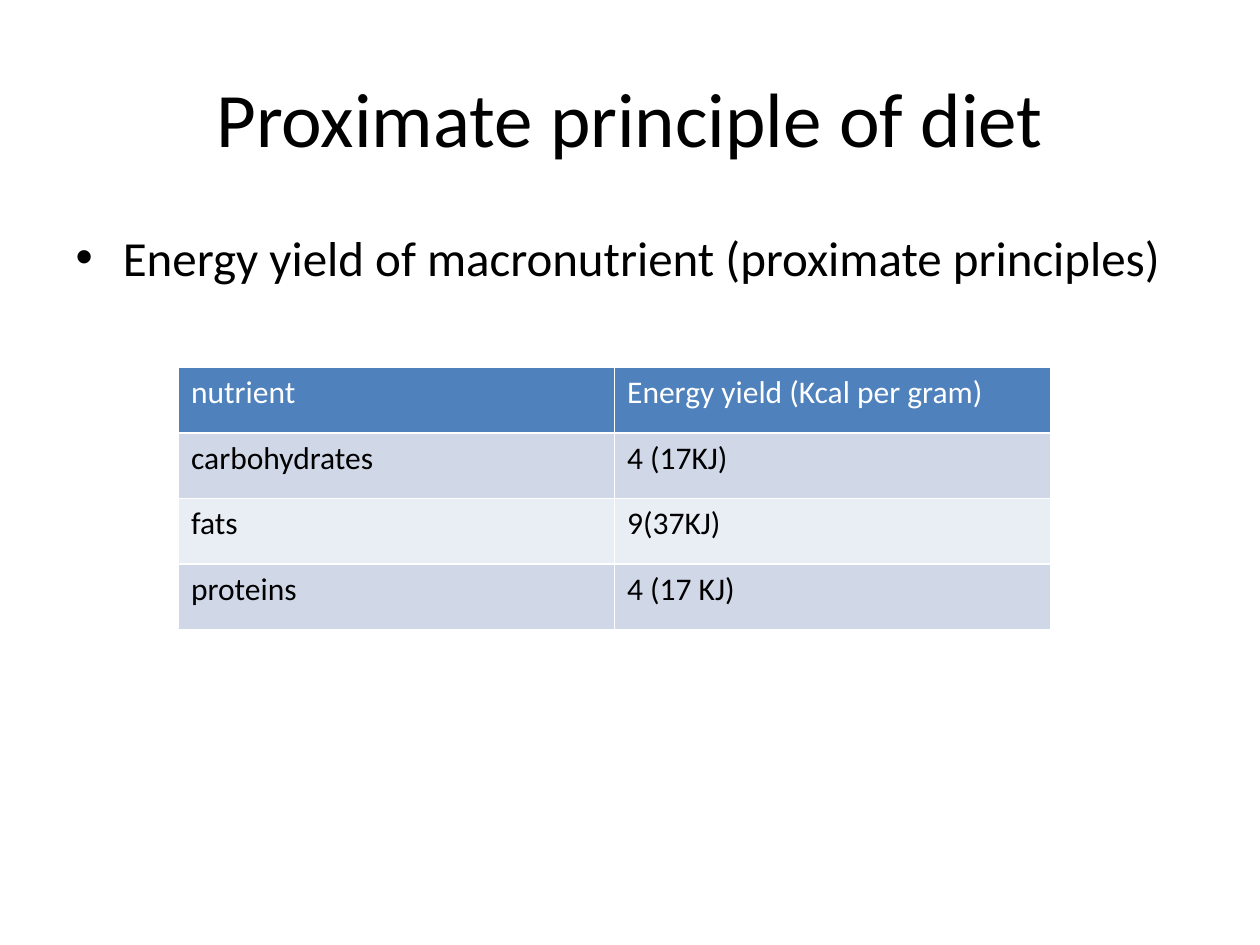
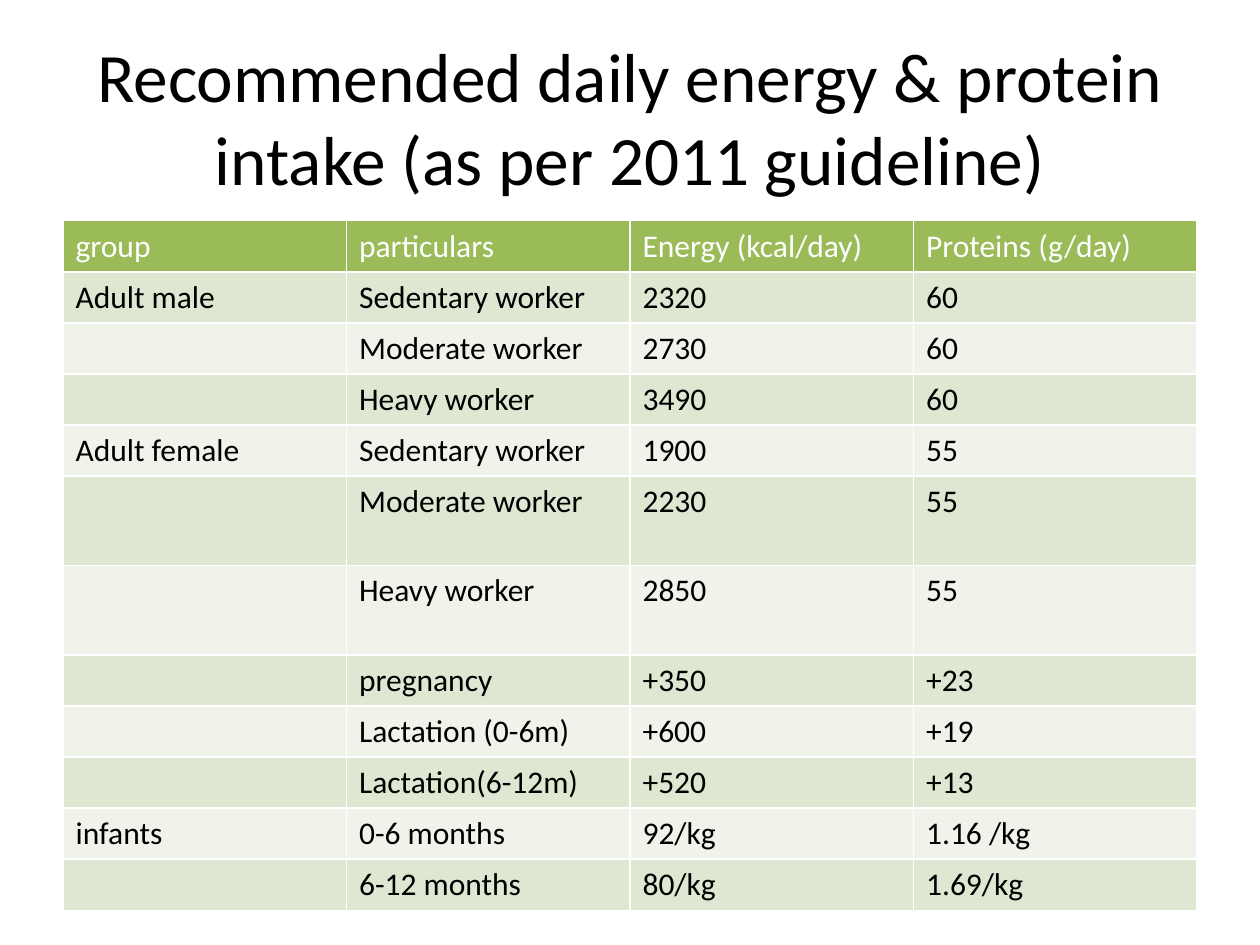
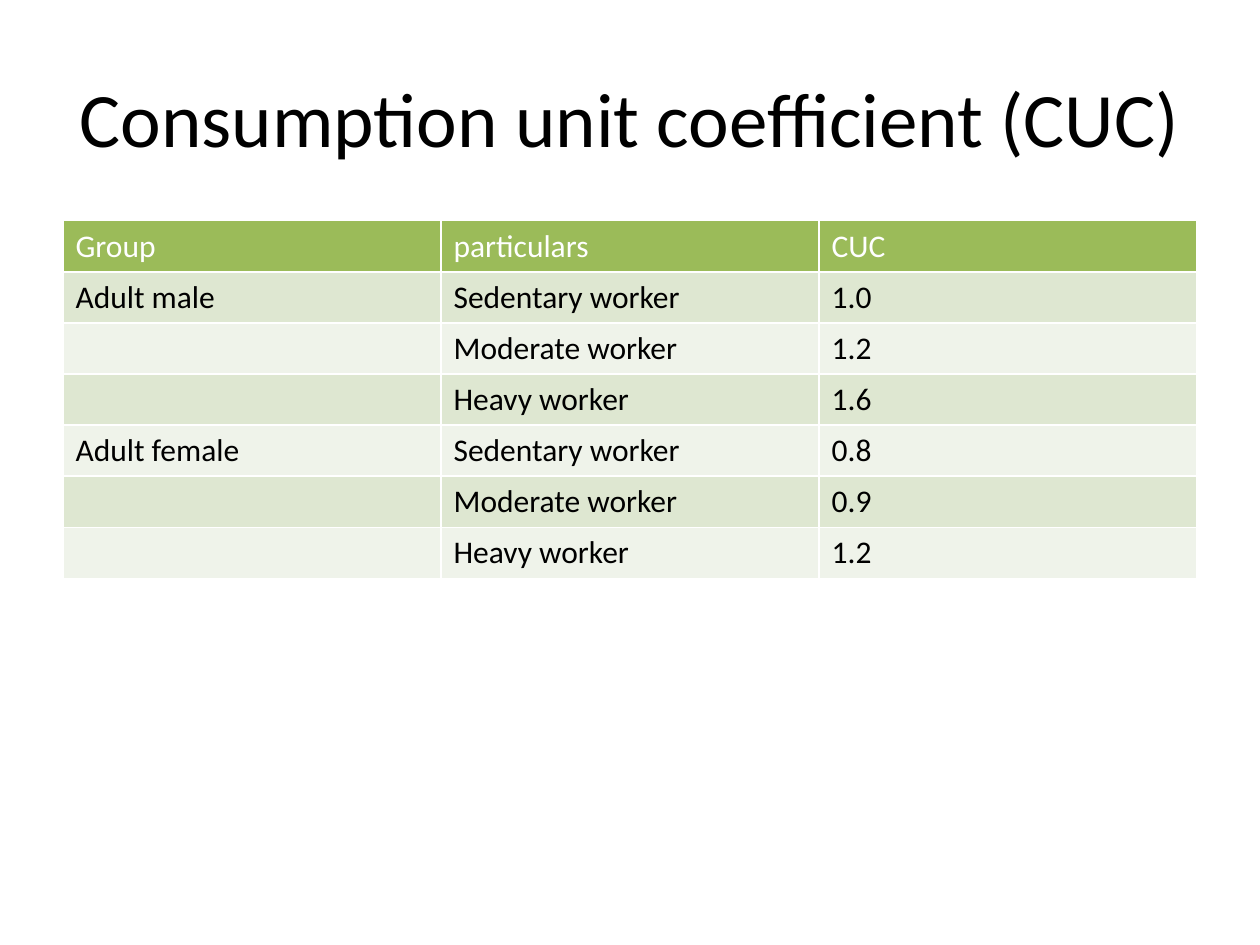
"""Builds three slides on diet energy, daily intake and consumption units."""
from pptx import Presentation
from pptx.dml.color import RGBColor
from pptx.enum.text import MSO_ANCHOR, PP_ALIGN
from pptx.util import Cm, Pt

MIDDLE = MSO_ANCHOR.MIDDLE
CENTER = PP_ALIGN.CENTER
FONT = "Calibri"
BLACK = RGBColor(0x00, 0x00, 0x00)
WHITE = RGBColor(0xFF, 0xFF, 0xFF)
BLUE = RGBColor(0x4F, 0x81, 0xBD)
BLUES = RGBColor(0xE9, 0xED, 0xF4), RGBColor(0xD0, 0xD8, 0xE8)
GREEN = RGBColor(0x9B, 0xBB, 0x59)
GREENS = RGBColor(0xEF, 0xF3, 0xEA), RGBColor(0xDE, 0xE7, 0xD1)
LEFT, TOP, WIDTH = 1.27, 4.45, 22.86
ROW, TALL = 1.03, 1.8

ENERGY = [
    ("nutrient", "Energy yield (Kcal per gram)"),
    ("carbohydrates", "4 (17KJ)"),
    ("fats", "9(37KJ)"),
    ("proteins", "4 (17 KJ)"),
]
INTAKE = [
    ("group", "particulars", "Energy (kcal/day)", "Proteins (g/day)"),
    ("Adult male", "Sedentary worker", "2320", "60"),
    ("", "Moderate worker", "2730", "60"),
    ("", "Heavy worker", "3490", "60"),
    ("Adult female", "Sedentary worker", "1900", "55"),
    ("", "Moderate worker", "2230", "55"),
    ("", "Heavy worker", "2850", "55"),
    ("", "pregnancy", "+350", "+23"),
    ("", "Lactation (0-6m)", "+600", "+19"),
    ("", "Lactation(6-12m)", "+520", "+13"),
    ("infants", "0-6 months", "92/kg", "1.16 /kg"),
    ("", "6-12 months", "80/kg", "1.69/kg"),
]
UNITS = [
    ("Group", "particulars", "CUC"),
    ("Adult male", "Sedentary worker", "1.0"),
    ("", "Moderate worker", "1.2"),
    ("", "Heavy worker", "1.6"),
    ("Adult female", "Sedentary worker", "0.8"),
    ("", "Moderate worker", "0.9"),
    ("", "Heavy worker", "1.2"),
]


class Deck:
    """Holds the shared style and the current slide."""

    def __init__(self):
        """Start an empty deck."""
        self.prs = Presentation()
        self.prs.slide_width, self.prs.slide_height = Cm(25.4), Cm(19.05)
        self.slide = None

    def style(self, para, size, color):
        """Set the font of a paragraph."""
        font = para.font
        font.name, font.size, font.bold = FONT, Pt(size), False
        font.color.rgb = color

    def place(self, shape, top, height):
        """Move a shape into the main column."""
        shape.left, shape.top = Cm(LEFT), Cm(top)
        shape.width, shape.height = Cm(WIDTH), Cm(height)

    def page(self, title, size=44, layout="Title Only"):
        """Add a slide with a title."""
        kind = self.prs.slide_layouts.get_by_name(layout)
        self.slide = self.prs.slides.add_slide(kind)
        shape = self.slide.shapes.title
        self.place(shape, 0.76, 3.18)
        frame = shape.text_frame
        frame.text, frame.vertical_anchor = title, MIDDLE
        para = frame.paragraphs[0]
        para.alignment = CENTER
        self.style(para, size, BLACK)

    def body(self, text):
        """Fill the list placeholder."""
        shape = self.slide.placeholders[1]
        self.place(shape, TOP, 12.57)
        shape.text_frame.text = text
        self.style(shape.text_frame.paragraphs[0], 28, BLACK)

    def table(self, data, head, bands, left=LEFT, top=TOP, width=WIDTH,
              row=ROW, tall=()):
        """Add a banded table; rows listed in tall are higher."""
        high = [TALL if i in tall else row for i in range(len(data))]
        grid = self.slide.shapes.add_table(
            len(data), len(data[0]), Cm(left), Cm(top), Cm(width),
            Cm(sum(high))).table
        for i, line in enumerate(data):
            grid.rows[i].height = Cm(high[i])
            for j, text in enumerate(line):
                cell = grid.cell(i, j)
                cell.text = text
                cell.fill.solid()
                cell.fill.fore_color.rgb = bands[i % 2] if i else head
                para = cell.text_frame.paragraphs[0]
                self.style(para, 18, BLACK if i else WHITE)


def main():
    """Build and save the deck."""
    deck = Deck()
    deck.page("Proximate principle of diet", layout="Title and Content")
    deck.body("Energy yield of macronutrient (proximate principles)")
    deck.table(ENERGY, BLUE, BLUES, left=3.6, top=7.41, width=17.58, row=1.32)

    deck.page("Recommended daily energy & protein intake "
              "(as per 2011 guideline)", size=39.6)
    deck.table(INTAKE, GREEN, GREENS, tall=(5, 6))

    deck.page("Consumption unit coefficient (CUC)")
    deck.table(UNITS, GREEN, GREENS)
    deck.prs.save("out.pptx")


if __name__ == "__main__":
    main()
